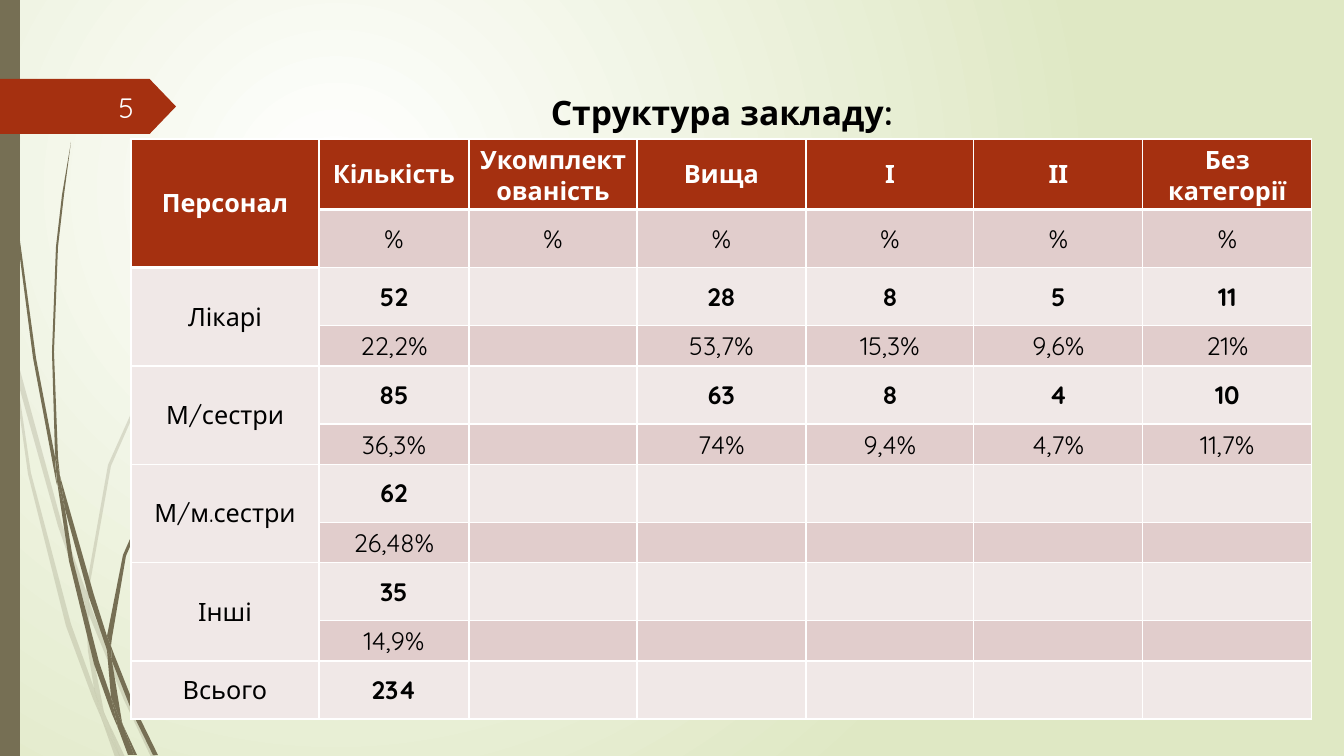
import pptx
import pptx.util
from pptx.dml.color import RGBColor
from pptx.enum.shapes import MSO_SHAPE
from pptx.enum.text import MSO_ANCHOR, MSO_AUTO_SIZE, PP_ALIGN
from pptx.oxml import parse_xml
from pptx.oxml.ns import nsdecls, qn

PX = 914400 / 100.8
FONT = "Quicksand"
WHITE = RGBColor(0xFF, 0xFF, 0xFF)
NUMBER_WHITE = RGBColor(0xFE, 0xFF, 0xFF)
BLACK = RGBColor(0, 0, 0)
PALE_GREEN = RGBColor(0xDF, 0xE8, 0xC4)
OLIVE = RGBColor(0x76, 0x6F, 0x54)
RUST = RGBColor(0xA5, 0x30, 0x10)
ROSE = RGBColor(0xE1, 0xCD, 0xCC)
LIGHT_ROSE = RGBColor(0xF0, 0xE8, 0xE7)


def paint(sp, color):
    sp.shadow.inherit = False
    sp.fill.solid()
    sp.fill.fore_color.rgb = color
    sp.line.fill.background()


def write(tf, text, size, color, bold=False, align=PP_ALIGN.CENTER):
    tf.text = text
    p = tf.paragraphs[0]
    p.alignment = align
    p.font.size = pptx.util.Pt(size)
    for r in p.runs:
        r.font.name = FONT
        r.font.size = pptx.util.Pt(size)
        r.font.bold = bold
        r.font.color.rgb = color


prs = pptx.Presentation()
prs.slide_width, prs.slide_height = round(1344 * PX), round(756 * PX)
s = prs.slides.add_slide(prs.slide_layouts[5])

# Background: radial gradient
fill = s.background.fill
fill.gradient()
for stop, color in zip(fill.gradient_stops, (WHITE, PALE_GREEN)):
    stop.color.rgb = color
lin = s.background._cSld.find(".//" + qn("a:lin"))
lin.getparent().replace(lin, parse_xml(
    f'<a:path {nsdecls("a")} path="circle">'
    '<a:fillToRect l="50000" t="50000" r="100000" b="100000"/></a:path>'))

# Grass: outlines of the blade pieces
pale_blades = [
    [(11, 353), (9, 325), (0, 284), (0, 301), (10, 347)],
    [(58, 526), (85, 604), (86, 591), (62, 524), (14, 348), (17, 379)],
    [(93, 612), (89, 601), (89, 615), (124, 700), (151, 757), (156, 757), (128, 698)],
    [(120, 757), (125, 757), (106, 717)],
    [(94, 688), (71, 624), (31, 473), (17, 379), (11, 353), (28, 474), (66, 626), (93, 699),
     (102, 720), (100, 713)],
    [(85, 604), (88, 651), (94, 688), (97, 698), (106, 717), (104, 712), (92, 651), (89, 615),
     (89, 613)],
    [(89, 589), (111, 466), (161, 352), (231, 247), (270, 200), (292, 176), (314, 155), (314, 154),
     (291, 176), (270, 199), (230, 246), (159, 351), (108, 465), (86, 589), (86, 591), (89, 601)],
    [(102, 720), (115, 757), (120, 757)],
    [(89, 613), (89, 615), (89, 601), (86, 591), (85, 604)],
    [(97, 698), (94, 688), (100, 713), (102, 720), (120, 757), (106, 717)],
]
dark_blades = [
    [(7, 111), (17, 235), (33, 358), (56, 481), (57, 485), (55, 461), (55, 457), (36, 358),
     (19, 234), (8, 110), (5, 48), (4, 0), (3, 0), (4, 48)],
    [(89, 597), (107, 650), (107, 638), (107, 636), (94, 595), (60, 476), (65, 509)],
    [(114, 654), (111, 646), (112, 661), (133, 714), (153, 755), (158, 755), (137, 712)],
    [(111, 697), (99, 662), (73, 560), (65, 509), (57, 481), (69, 561), (94, 664), (112, 714),
     (118, 728), (117, 723)],
    [(60, 476), (58, 457), (54, 352), (58, 247), (64, 195), (71, 142), (62, 195), (56, 247),
     (52, 352), (55, 453)],
    [(134, 755), (137, 755), (123, 725)],
    [(57, 481), (65, 509), (60, 476), (55, 453), (55, 457)],
    [(112, 638), (126, 556), (159, 480), (207, 409), (233, 377), (247, 362), (263, 347),
     (247, 361), (233, 376), (206, 408), (157, 478), (123, 555), (107, 636), (111, 646)],
    [(118, 728), (128, 755), (132, 755)],
    [(107, 650), (111, 697), (117, 712), (123, 725), (122, 722), (112, 661), (110, 656)],
    [(107, 650), (110, 656), (112, 661), (111, 646), (107, 636), (107, 638)],
    [(117, 712), (111, 697), (117, 723), (118, 728), (131, 755), (134, 755), (123, 725)],
]
for blades, opacity in ((pale_blades, 20), (dark_blades, 100)):
    for outline in blades:
        builder = s.shapes.build_freeform(*outline[0], scale=PX)
        builder.add_line_segments(outline[1:], close=True)
        sp = builder.convert_to_shape()
        paint(sp, OLIVE)
        if opacity < 100:
            sp._element.spPr.find(".//" + qn("a:srgbClr")).append(
                parse_xml(f'<a:alpha {nsdecls("a")} val="{opacity * 1000}"/>'))

# Side bar and page number arrow
for kind, box, color in ((MSO_SHAPE.RECTANGLE, (0, 0, 20, 756), OLIVE),
                         (MSO_SHAPE.PENTAGON, (0, 79, 176, 55), RUST)):
    sp = s.shapes.add_shape(kind, *(round(v * PX) for v in box))
    paint(sp, color)
sp.adjustments[0] = 0.48

number = s.shapes.add_textbox(*(round(v * PX) for v in (58, 87, 86, 40)))
number.text_frame.word_wrap = True
number.text_frame.vertical_anchor = MSO_ANCHOR.MIDDLE
write(number.text_frame, "5", 20, NUMBER_WHITE, align=PP_ALIGN.RIGHT)

title = s.shapes.title
title.left, title.top, title.width, title.height = (round(v * PX) for v in (190, 87, 1064, 50))
title.text_frame.auto_size = MSO_AUTO_SIZE.NONE
title.text_frame.vertical_anchor = MSO_ANCHOR.TOP
write(title.text_frame, "Структура закладу:", 24, BLACK, bold=True)

# Staff table
rows = [
    ["Персонал", "Кількість", "Укомплектованість", "Вища", "І", "ІІ", "Без категорії"],
    ["", "%", "%", "%", "%", "%", "%"],
    ["Лікарі", "52", "", "28", "8", "5", "11"],
    ["", "22,2%", "", "53,7%", "15,3%", "9,6%", "21%"],
    ["М/сестри", "85", "", "63", "8", "4", "10"],
    ["", "36,3%", "", "74%", "9,4%", "4,7%", "11,7%"],
    ["М/м.сестри", "62", "", "", "", "", ""],
    ["", "26,48%", "", "", "", "", ""],
    ["Інші", "35", "", "", "", "", ""],
    ["", "14,9%", "", "", "", "", ""],
    ["Всього", "234", "", "", "", "", ""],
]
widths = [188, 150, 168, 169, 168, 169, 169]
heights = [70, 58] + [58, 40] * 4 + [58]
frame = s.shapes.add_table(len(rows), len(widths), *(
    round(v * PX) for v in (131, 139, sum(widths), sum(heights))))
table = frame.table
table.horz_banding = False
for column, width in zip(table.columns, widths):
    column.width = round(width * PX)
for row, height in zip(table.rows, heights):
    row.height = round(height * PX)
for top in range(0, 10, 2):
    table.cell(top, 0).merge(table.cell(top + 1, 0))

for i, row in enumerate(rows):
    for j, text in enumerate(row):
        cell = table.cell(i, j)
        header = i == 0 or (i == 1 and j == 0)
        cell.vertical_anchor = MSO_ANCHOR.MIDDLE
        write(cell.text_frame, text, 18, WHITE if header else BLACK,
              bold=header or (j > 0 and i % 2 == 0))
        cell.fill.solid()
        cell.fill.fore_color.rgb = RUST if header else ROSE if i % 2 else LIGHT_ROSE
        under_header = (i == 1 and j > 0) or (i == 2 and j == 0)
        sides = {"L": 1, "R": 1, "T": 3 if under_header else 1, "B": 3 if header else 1}
        for k, (side, points) in enumerate(sides.items()):
            cell._tc.get_or_add_tcPr().insert(k, parse_xml(
                f'<a:ln{side} {nsdecls("a")} w="{points * 12700}"><a:solidFill>'
                f'<a:srgbClr val="{WHITE}"/></a:solidFill></a:ln{side}>'))

prs.save("out.pptx")
